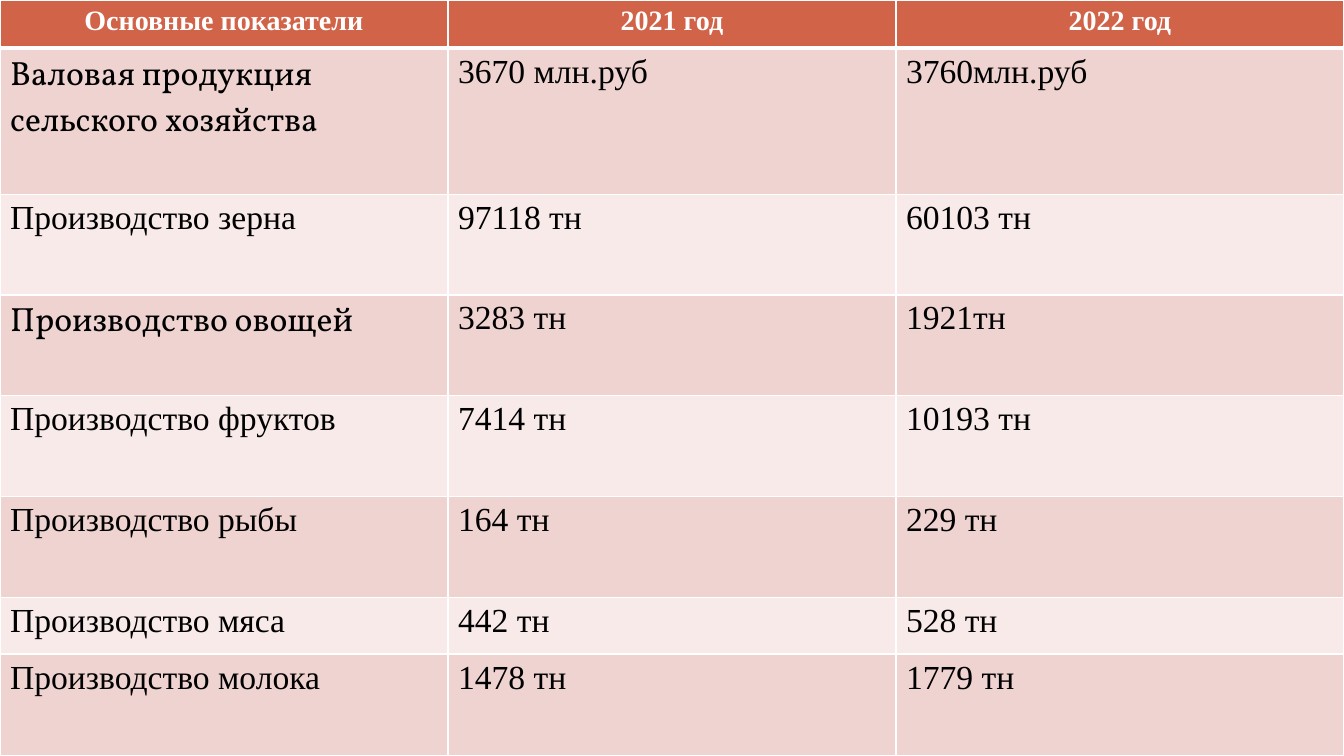
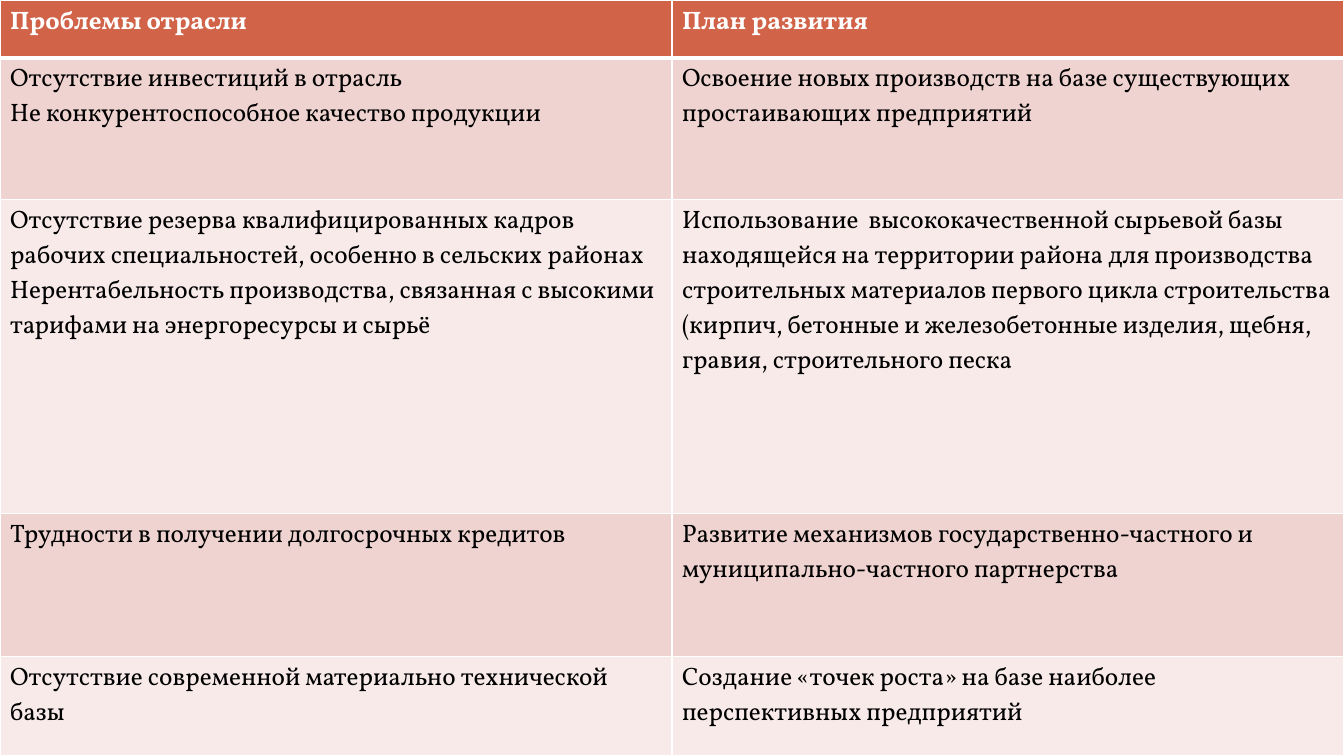
import pptx
import pptx.dml.color
import pptx.enum.text
import pptx.oxml.ns
import pptx.util
from lxml import etree

PX = 9525
WIDTH, HEIGHT = 1280, 720
BLACK = pptx.dml.color.RGBColor(0x00, 0x00, 0x00)
WHITE = pptx.dml.color.RGBColor(0xFF, 0xFF, 0xFF)
RUST = pptx.dml.color.RGBColor(0xD1, 0x63, 0x49)
ROSE = pptx.dml.color.RGBColor(0xEE, 0xD3, 0xD0)
BLUSH = pptx.dml.color.RGBColor(0xF7, 0xEA, 0xE9)
SERIF, DISPLAY = "Times New Roman", "Vollkorn"
LEFT = pptx.enum.text.PP_ALIGN.LEFT
CENTER = pptx.enum.text.PP_ALIGN.CENTER

INDICATORS = [
    ("Основные показатели", "2021 год", "2022 год"),
    ("Валовая продукция сельского хозяйства", "3670 млн.руб", "3760млн.руб"),
    ("Производство зерна", "97118 тн", "60103 тн"),
    ("Производство овощей", "3283 тн", "1921тн"),
    ("Производство фруктов", "7414 тн", "10193 тн"),
    ("Производство рыбы", "164 тн", "229 тн"),
    ("Производство мяса", "442 тн", "528 тн"),
    ("Производство молока", "1478 тн", "1779 тн"),
]
PLANS = [
    ("Проблемы отрасли", "План развития"),
    ("Отсутствие инвестиций в отрасль\n"
     "Не конкурентоспособное качество продукции",
     "Освоение новых производств на базе существующих простаивающих предприятий"),
    ("Отсутствие резерва квалифицированных кадров рабочих специальностей, "
     "особенно в сельских районах\n"
     "Нерентабельность производства, связанная с высокими тарифами "
     "на энергоресурсы и сырьё",
     "Использование  высококачественной сырьевой базы находящейся на территории "
     "района для производства строительных материалов первого цикла строительства "
     "(кирпич, бетонные и железобетонные изделия, щебня, гравия, строительного песка"),
    ("Трудности в получении долгосрочных кредитов",
     "Развитие механизмов государственно-частного и муниципально-частного партнерства"),
    ("Отсутствие современной материально технической базы",
     "Создание «точек роста» на базе наиболее перспективных предприятий"),
]


class Deck:
    """Holds the shared table style and the current slide."""

    def __init__(self):
        self.prs = pptx.Presentation()
        self.prs.slide_width = WIDTH * PX
        self.prs.slide_height = HEIGHT * PX
        self.s = None

    def slide(self):
        self.s = self.prs.slides.add_slide(self.prs.slide_layouts[6])
        fill = self.s.background.fill
        fill.solid()
        fill.fore_color.rgb = BLACK

    def borders(self, cell, row):
        tcPr = cell._tc.get_or_add_tcPr()
        widths = {"L": 1, "R": 1, "T": 3 if row == 1 else 1, "B": 3 if row == 0 else 1}
        for side, width in widths.items():
            ln = etree.SubElement(tcPr, pptx.oxml.ns.qn(f"a:ln{side}"),
                                  w=str(pptx.util.Pt(width)))
            fill = etree.SubElement(ln, pptx.oxml.ns.qn("a:solidFill"))
            etree.SubElement(fill, pptx.oxml.ns.qn("a:srgbClr"), val=str(WHITE))

    def cell(self, cell, row, text, font, size, align):
        self.borders(cell, row)
        cell.fill.solid()
        cell.fill.fore_color.rgb = RUST if row == 0 else ROSE if row % 2 else BLUSH
        cell.text = text
        for p in cell.text_frame.paragraphs:
            p.alignment = align
            p.font.name = font
            p.font.size = pptx.util.Pt(size)
            p.font.bold = row == 0
            p.font.color.rgb = WHITE if row == 0 else BLACK

    def table(self, rows, heights, font, head_size, size, head_align=LEFT, accents=()):
        count = len(rows[0])
        table = self.s.shapes.add_table(len(rows), count, 0, 0,
                                        WIDTH * PX, HEIGHT * PX).table
        for column in table.columns:
            column.width = WIDTH * PX // count
        for i, (texts, height) in enumerate(zip(rows, heights)):
            table.rows[i].height = height * PX
            for j, text in enumerate(texts):
                self.cell(table.cell(i, j), i, text,
                          DISPLAY if (i, j) in accents else font,
                          size if i else head_size, LEFT if i else head_align)


def main():
    deck = Deck()
    deck.slide()
    deck.table(INDICATORS, [46, 139, 96, 96, 96, 96, 54, 97], SERIF, 20, 24,
               CENTER, accents={(1, 0), (3, 0)})
    deck.slide()
    deck.table(PLANS, [55, 135, 299, 136, 95], DISPLAY, 18, 18)
    deck.prs.save("out.pptx")


if __name__ == "__main__":
    main()
